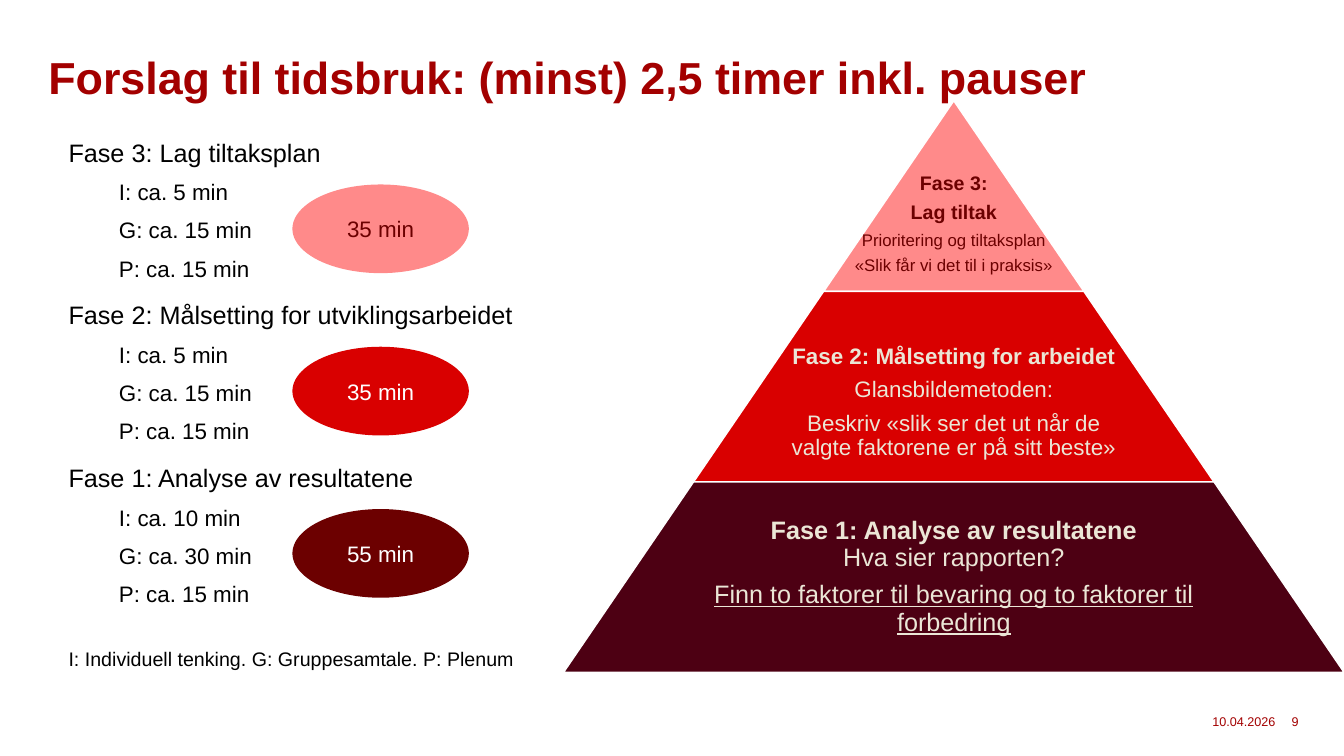
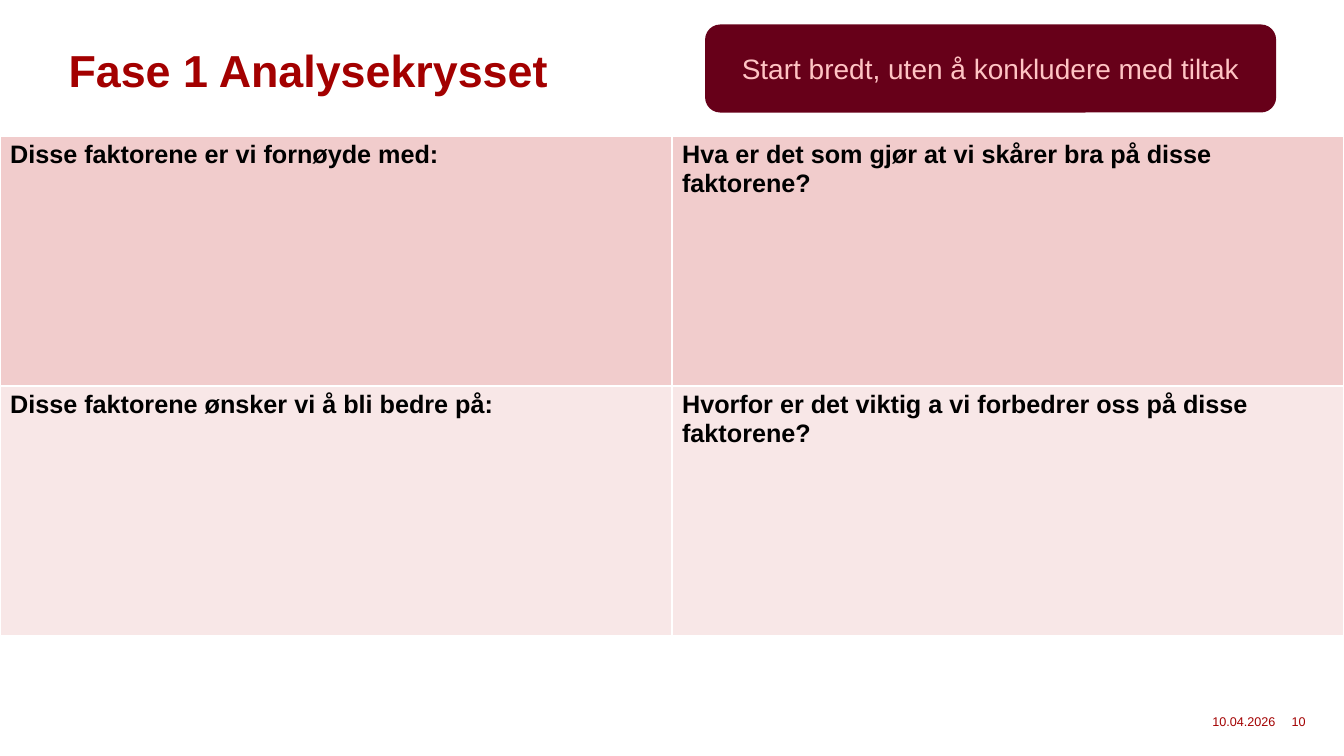
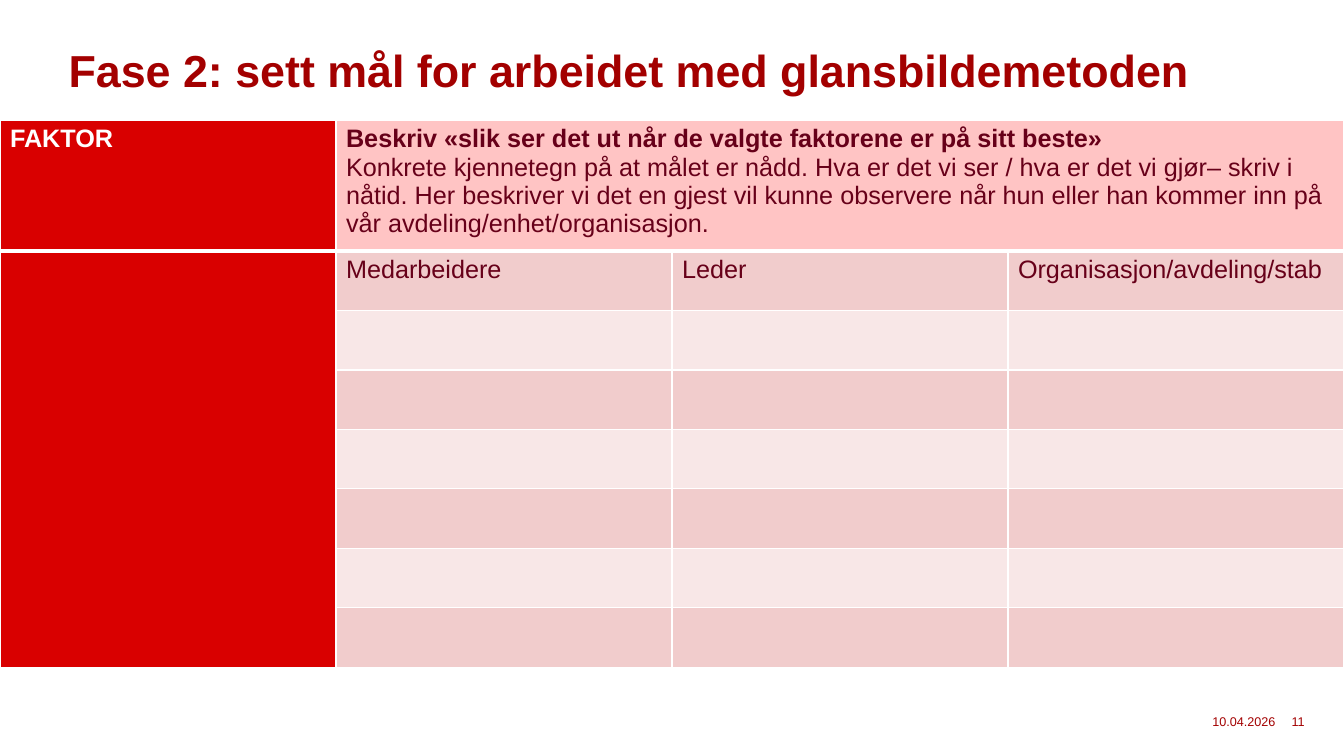
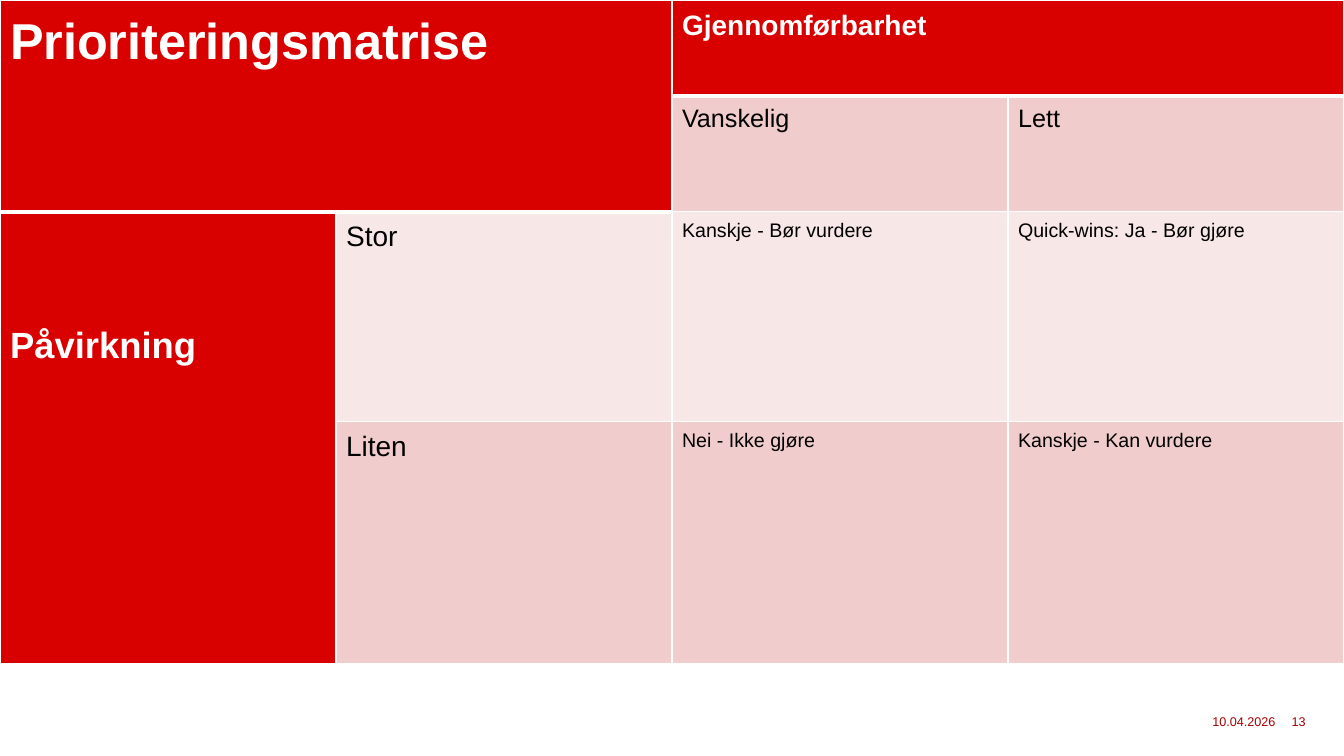
from dataclasses import dataclass
from typing import NamedTuple

from lxml.etree import SubElement
from pptx import Presentation
from pptx.dml.color import RGBColor
from pptx.enum.shapes import MSO_SHAPE
from pptx.enum.text import MSO_ANCHOR, PP_ALIGN
from pptx.oxml.ns import qn
from pptx.util import Inches, Pt


@dataclass(frozen=True)
class Theme:
    font: str = "Arial"
    white: str = "FFFFFF"
    black: str = "000000"
    title: str = "A30000"
    red: str = "D90000"
    salmon: str = "FF8A8A"
    maroon: str = "6C0000"
    wine: str = "670019"
    plum: str = "4D0013"
    cream: str = "EBE6D6"
    pink: str = "FFC4C4"
    band_dark: str = "F1CCCC"
    band_light: str = "F8E7E7"
    title_size: float = 32
    matrix_size: float = 36
    impact_size: float = 26
    large: float = 20
    body: float = 18
    detail: float = 16
    note: float = 14
    small: float = 12
    footer: float = 9
    thin: float = 1
    thick: float = 3


THEME = Theme()
SLIDE_WIDTH = 13.33
DATE = "10.04.2026"


class Box(NamedTuple):
    left: float
    top: float
    width: float
    height: float


class Run(NamedTuple):
    text: str
    size: float = THEME.body
    color: str = THEME.black
    bold: bool = False
    underline: bool = False


@dataclass(frozen=True)
class Para:
    runs: tuple[Run, ...]
    align: PP_ALIGN = PP_ALIGN.LEFT
    before: float = 0
    after: float = 0
    spacing: float = 1.0
    indent: float = 0


@dataclass(frozen=True)
class Cell:
    row: int
    col: int
    fill: str
    paras: tuple[Para, ...] = ()
    rows: int = 1
    cols: int = 1
    heavy_bottom: bool = False
    top_margin: float = 0.05


@dataclass(frozen=True)
class Phase:
    name: str
    steps: tuple[str, ...]
    total: str
    fill: str
    color: str


@dataclass(frozen=True)
class Tier:
    fill: str
    text_width: float
    lead: float
    paras: tuple[Para, ...]


def place(box: Box) -> tuple:
    return tuple(Inches(value) for value in box)


def write(frame, paras: tuple[Para, ...]) -> None:
    frame.word_wrap = True
    for index, para in enumerate(paras):
        paragraph = frame.paragraphs[0] if index == 0 else frame.add_paragraph()
        if para.indent:
            paragraph._p.get_or_add_pPr().set("marL", str(Inches(para.indent)))
        paragraph.alignment = para.align
        paragraph.space_before = Pt(para.before if index else 0)
        paragraph.space_after = Pt(para.after)
        paragraph.line_spacing = para.spacing
        for number, part in enumerate(para.runs):
            if number:
                paragraph.add_line_break()
            run = paragraph.add_run()
            run.text = part.text
            font = run.font
            font.name = THEME.font
            font.size = Pt(part.size)
            font.bold = part.bold
            font.underline = part.underline
            font.color.rgb = RGBColor.from_string(part.color)


def add_text(slide, box: Box, paras: tuple[Para, ...],
             anchor: MSO_ANCHOR = MSO_ANCHOR.MIDDLE, lead: float = 0) -> None:
    frame = slide.shapes.add_textbox(*place(box)).text_frame
    frame.margin_left = frame.margin_right = frame.margin_bottom = 0
    frame.margin_top = Inches(lead)
    frame.vertical_anchor = anchor
    write(frame, paras)


def add_filled(slide, kind: MSO_SHAPE, box: Box, fill: str, line: str | None = None):
    shape = slide.shapes.add_shape(kind, *place(box))
    shape.shadow.inherit = False
    shape.fill.solid()
    shape.fill.fore_color.rgb = RGBColor.from_string(fill)
    if line:
        shape.line.color.rgb = RGBColor.from_string(line)
        shape.line.width = Pt(THEME.thin)
    else:
        shape.line.fill.background()
    return shape


def add_label(shape, run: Run) -> None:
    shape.text_frame.vertical_anchor = MSO_ANCHOR.MIDDLE
    write(shape.text_frame, (Para((run,), PP_ALIGN.CENTER),))


def add_title(slide, text: str, left: float = 0.68, top: float = 0.25) -> None:
    run = Run(text, THEME.title_size, THEME.title, True)
    add_text(slide, Box(left, top, 11.97, 0.94), (Para((run,), spacing=0.9),))


def add_footer(slide, number: int) -> None:
    for text, left, width, align in (
        (DATE, 11.47, 1.18, PP_ALIGN.RIGHT),
        (str(number), 12.81, 0.38, PP_ALIGN.LEFT),
    ):
        run = Run(text, THEME.footer, THEME.title)
        add_text(slide, Box(left, 7.04, width, 0.23), (Para((run,), align),))


def set_borders(cell, top: float, bottom: float) -> None:
    properties = cell._tc.get_or_add_tcPr()
    sides = (("lnL", THEME.thin), ("lnR", THEME.thin), ("lnT", top), ("lnB", bottom))
    for index, (side, width) in enumerate(sides):
        line = SubElement(properties, qn(f"a:{side}"), w=str(Pt(width)))
        SubElement(SubElement(line, qn("a:solidFill")), qn("a:srgbClr"), val=THEME.white)
        properties.insert(index, line)


def add_grid(slide, top: float, columns: int, heights: list[float], cells: list[Cell]) -> None:
    box = Box(0, top, SLIDE_WIDTH, sum(heights))
    table = slide.shapes.add_table(len(heights), columns, *place(box)).table
    table.first_row = table.horz_banding = False
    for column in table.columns:
        column.width = Inches(SLIDE_WIDTH / columns)
    for row, height in zip(table.rows, heights):
        row.height = Inches(height)
    heavy = {
        (cell.row + cell.rows, cell.col + offset)
        for cell in cells if cell.heavy_bottom
        for offset in range(cell.cols)
    }
    for cell in cells:
        last_row, last_col = cell.row + cell.rows - 1, cell.col + cell.cols - 1
        origin = table.cell(cell.row, cell.col)
        if cell.rows * cell.cols > 1:
            origin.merge(table.cell(last_row, last_col))
        for row in range(cell.row, last_row + 1):
            for col in range(cell.col, last_col + 1):
                part = table.cell(row, col)
                part.fill.solid()
                part.fill.fore_color.rgb = RGBColor.from_string(cell.fill)
                set_borders(
                    part,
                    THEME.thick if (row, col) in heavy else THEME.thin,
                    THEME.thick if cell.heavy_bottom else THEME.thin,
                )
        origin.margin_top = Inches(cell.top_margin)
        if cell.paras:
            write(origin.text_frame, cell.paras)


def tier_para(size: float, color: str, *texts: str,
              bold: int = 0, underline: bool = False) -> Para:
    runs = tuple(
        Run(text, size, color, index < bold, underline) for index, text in enumerate(texts)
    )
    return Para(runs, PP_ALIGN.CENTER, after=round(size * 0.4, 1), spacing=0.9)


def matrix_para(text: str, size: float, color: str = THEME.black, bold: bool = False) -> tuple[Para, ...]:
    return (Para((Run(text, size, color, bold),), after=10, spacing=1.15),)


PHASES = (
    Phase("Fase 3: Lag tiltaksplan", ("I: ca. 5 min", "G: ca. 15 min", "P: ca. 15 min"),
          "35 min", THEME.salmon, THEME.maroon),
    Phase("Fase 2: Målsetting for utviklingsarbeidet",
          ("I: ca. 5 min", "G: ca. 15 min", "P: ca. 15 min"),
          "35 min", THEME.red, THEME.white),
    Phase("Fase 1: Analyse av resultatene", ("I: ca. 10 min", "G: ca. 30 min", "P: ca. 15 min"),
          "55 min", THEME.maroon, THEME.white),
)

TIERS = (
    Tier(THEME.salmon, 2.58, 0.56, (
        tier_para(THEME.note, THEME.maroon, "Fase 3:", bold=1),
        tier_para(THEME.note, THEME.maroon, "Lag tiltak", bold=1),
        tier_para(THEME.small, THEME.maroon, "Prioritering og tiltaksplan"),
        tier_para(THEME.small, THEME.maroon, "«Slik får vi det til i praksis»"),
    )),
    Tier(THEME.red, 3.32, 0.32, (
        tier_para(THEME.detail, THEME.cream, "Fase 2: Målsetting for arbeidet", bold=1),
        tier_para(THEME.detail, THEME.cream, "Glansbildemetoden:"),
        tier_para(THEME.detail, THEME.cream,
                  "Beskriv «slik ser det ut når de valgte faktorene er på sitt beste»"),
    )),
    Tier(THEME.plum, 4.97, 0, (
        tier_para(THEME.body, THEME.cream, "Fase 1: Analyse av resultatene",
                  "Hva sier rapporten?", bold=1),
        tier_para(THEME.body, THEME.cream,
                  "Finn to faktorer til bevaring og to faktorer til forbedring", underline=True),
    )),
)


def draw_pyramid(slide) -> None:
    center, top, height, growth = 9.46, 1.0, 1.89, 2.58
    for index, tier in enumerate(TIERS):
        width = growth * (index + 1)
        tier_top = top + index * height
        box = Box(center - width / 2, tier_top, width, height)
        shape = add_filled(slide, MSO_SHAPE.TRAPEZOID, box, tier.fill, THEME.white)
        shape.adjustments[0] = growth / 2 / height
        text_box = Box(center - tier.text_width / 2, tier_top, tier.text_width, height)
        add_text(slide, text_box, tier.paras, lead=tier.lead)


def draw_time_plan(slide) -> None:
    outline: list[Para] = []
    for phase in PHASES:
        outline.append(Para((Run(phase.name),), before=10, after=3))
        outline += [
            Para((Run(step, THEME.detail),), before=5, after=3, indent=0.5)
            for step in phase.steps
        ]
    legend = Run("I: Individuell tenking. G: Gruppesamtale. P: Plenum", THEME.note)
    outline.append(Para((legend,), before=26, after=3))
    add_text(slide, Box(0.68, 1.36, 4.78, 5.29), tuple(outline), MSO_ANCHOR.TOP)
    draw_pyramid(slide)
    for index, phase in enumerate(PHASES):
        box = Box(2.9, 1.83 + 1.61 * index, 1.75, 0.88)
        oval = add_filled(slide, MSO_SHAPE.OVAL, box, phase.fill)
        add_label(oval, Run(phase.total, THEME.detail, phase.color))
    add_title(slide, "Forslag til tidsbruk: (minst) 2,5 timer inkl. pauser", 0.48, 0.32)


def draw_analysis_cross(slide) -> None:
    add_title(slide, "Fase 1 Analysekrysset")
    questions = (
        ("Disse faktorene er vi fornøyde med:",
         "Hva er det som gjør at vi skårer bra på disse faktorene?"),
        ("Disse faktorene ønsker vi å bli bedre på:",
         "Hvorfor er det viktig a vi forbedrer oss på disse faktorene?"),
    )
    cells = [
        Cell(row, col, fill, (Para((Run(text, bold=True),)),))
        for row, (pair, fill) in enumerate(zip(questions, (THEME.band_dark, THEME.band_light)))
        for col, text in enumerate(pair)
    ]
    add_grid(slide, 1.35, 2, [2.48] * 2, cells)
    advice = add_filled(slide, MSO_SHAPE.ROUNDED_RECTANGLE, Box(7, 0.25, 5.65, 0.86),
                        THEME.wine, THEME.wine)
    add_label(advice, Run("Start bredt, uten å konkludere med tiltak", THEME.large, THEME.pink))


def draw_goal_table(slide) -> None:
    add_title(slide, "Fase 2: sett mål for arbeidet med glansbildemetoden")
    instruction = (
        Para((Run("Beskriv «slik ser det ut når de valgte faktorene er på sitt beste»",
                  color=THEME.wine, bold=True),)),
        Para((Run("Konkrete kjennetegn på at målet er nådd. Hva er det vi ser / hva er det vi "
                  "gjør– skriv i nåtid. Her beskriver vi det en gjest vil kunne observere når "
                  "hun eller han kommer inn på vår avdeling/enhet/organisasjon.",
                  color=THEME.wine),)),
    )
    factor = (Para((Run("FAKTOR", color=THEME.white, bold=True),)),)
    cells = [
        Cell(0, 0, THEME.red, factor, heavy_bottom=True),
        Cell(0, 1, THEME.pink, instruction, cols=3, heavy_bottom=True),
        Cell(1, 0, THEME.red, rows=7),
    ]
    for col, group in enumerate(("Medarbeidere", "Leder", "Organisasjon/avdeling/stab"), 1):
        heading = (Para((Run(group, color=THEME.wine),)),)
        cells.append(Cell(1, col, THEME.band_dark, heading))
        cells += [
            Cell(row, col, THEME.band_dark if row % 2 else THEME.band_light)
            for row in range(2, 8)
        ]
    add_grid(slide, 1.19, 4, [1.18] + [0.59] * 7, cells)


def draw_priority_matrix(slide) -> None:
    cells = [
        Cell(0, 0, THEME.red,
             matrix_para("Prioriteringsmatrise", THEME.matrix_size, THEME.white, True),
             rows=2, cols=2, heavy_bottom=True),
        Cell(0, 2, THEME.red,
             matrix_para("Gjennomførbarhet", THEME.large, THEME.white, True),
             cols=2, heavy_bottom=True),
        Cell(2, 0, THEME.red,
             matrix_para("Påvirkning", THEME.impact_size, THEME.white, True),
             rows=2, top_margin=1.07),
    ]
    cells += [
        Cell(1, col, THEME.band_dark, matrix_para(text, THEME.body))
        for col, text in enumerate(("Vanskelig", "Lett"), 2)
    ]
    impacts = (
        (THEME.band_light, "Stor", "Kanskje - Bør vurdere", "Quick-wins: Ja - Bør gjøre"),
        (THEME.band_dark, "Liten", "Nei - Ikke gjøre", "Kanskje - Kan vurdere"),
    )
    for row, (fill, *texts) in enumerate(impacts, 2):
        for col, text in enumerate(texts, 1):
            size = THEME.large if col == 1 else THEME.note
            cells.append(Cell(row, col, fill, matrix_para(text, size)))
    add_grid(slide, 0, 4, [0.95, 1.15, 2.08, 2.4], cells)


def main() -> None:
    deck = Presentation()
    deck.slide_width = Inches(SLIDE_WIDTH)
    deck.slide_height = Inches(7.5)
    pages = (
        (9, draw_time_plan),
        (10, draw_analysis_cross),
        (11, draw_goal_table),
        (13, draw_priority_matrix),
    )
    for number, draw in pages:
        slide = deck.slides.add_slide(deck.slide_layouts[6])
        draw(slide)
        add_footer(slide, number)
    deck.save("out.pptx")


if __name__ == "__main__":
    main()
